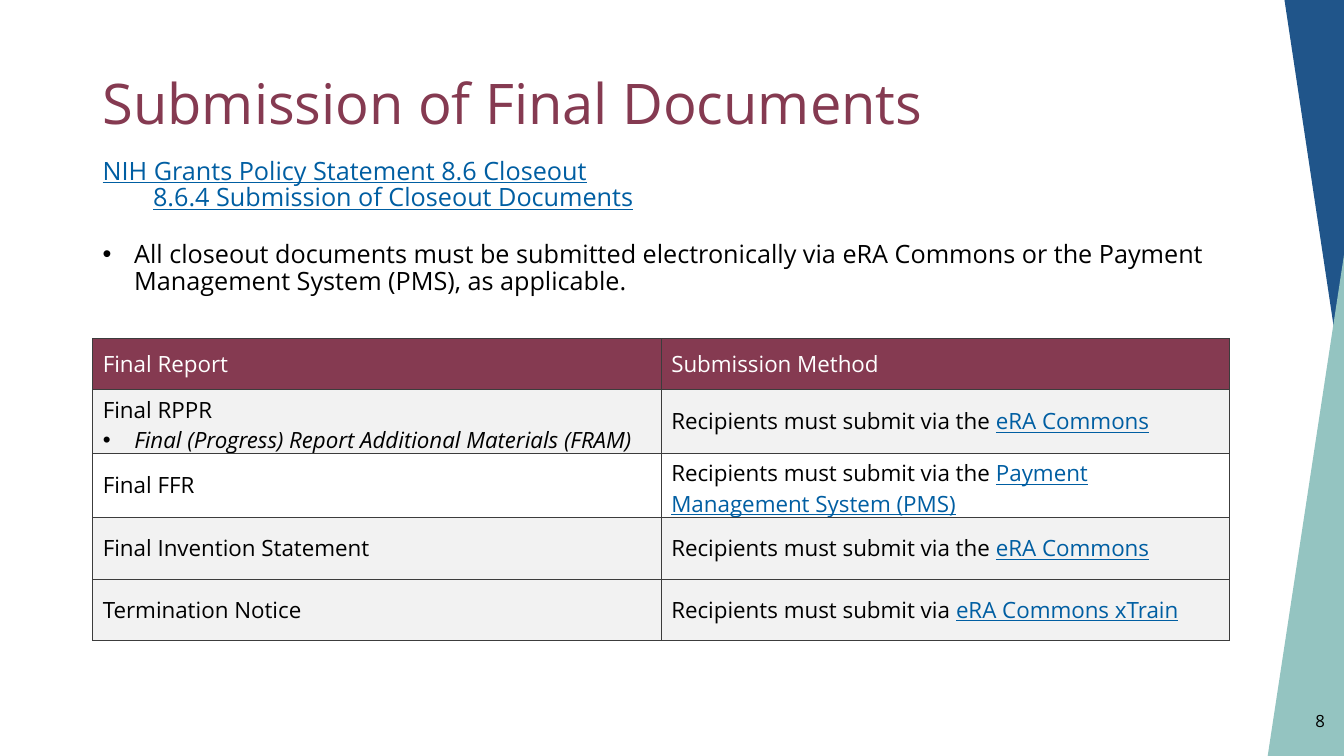
from pptx import Presentation
from pptx.dml.color import RGBColor as RGB
from pptx.enum.text import MSO_ANCHOR as Anchor, PP_ALIGN as Align
from pptx.oxml.ns import qn
from pptx.util import Pt
from lxml.etree import SubElement as Sub

WINE = RGB(0x85, 0x3A, 0x51)
BLUE = RGB(0x20, 0x55, 0x8A)
TEAL = RGB(0x94, 0xC4, 0xC1)
LINK = RGB(0x00, 0x5E, 0xA2)
BLACK = RGB(0, 0, 0)
WHITE = RGB(0xFF, 0xFF, 0xFF)
GRAY = RGB(0xF2, 0xF2, 0xF2)
EDGE = RGB(0x3C, 0x3C, 0x3C)
FONT = "Open Sans"
WIDE, HIGH = 960, 540
LEFT, SPAN = 66.24, 812.16
INDENT = 22.5

VIA = "Recipients must submit via "
ROWS = [  # height, report, sub-item, method, link, fill
    (44, "Final RPPR", "Final (Progress) Report Additional Materials (FRAM)",
     VIA + "the ", "eRA Commons", GRAY),
    (46, "Final FFR", None,
     VIA + "the ", "Payment Management System (PMS)", WHITE),
    (44, "Final Invention Statement", None,
     VIA + "the ", "eRA Commons", GRAY),
    (44, "Termination Notice", None,
     VIA, "eRA Commons xTrain", GRAY),
]


def style(run, size, color=BLACK, link=False, italic=False):
    font = run.font
    font.name, font.size = FONT, Pt(size)
    font.bold, font.italic, font.underline = False, italic, link
    font.color.rgb = LINK if link else color


def write(para, text, size, **look):
    para.text = text
    style(para.runs[0], size, **look)


def indent(para, left, bullet=False):
    props = para._p.get_or_add_pPr()
    props.set("marL", str(Pt(left)))
    props.set("indent", str(Pt(-left if bullet else 0)))
    if bullet:
        Sub(props, qn("a:buFont"), typeface="Arial")
        Sub(props, qn("a:buChar"), char="•")


def text_box(slide, box, anchor=Anchor.TOP):
    frame = slide.shapes.add_textbox(*map(Pt, box)).text_frame
    frame.word_wrap = True
    frame.vertical_anchor = anchor
    return frame


def wedge(slide, points, color):
    pen = slide.shapes.build_freeform(*map(Pt, points[0]))
    pen.add_line_segments([(Pt(x), Pt(y)) for x, y in points[1:]])
    shape = pen.convert_to_shape()
    shape.shadow.inherit = False
    shape.fill.solid()
    shape.fill.fore_color.rgb = color
    shape.line.fill.background()


def side_art(slide, box):
    left, top, wide, high = box
    right, base = left + wide, top + high
    wedge(slide, [(left + 12, top), (right, top), (right, top + 282)], BLUE)
    wedge(slide, [(left, base), (right, base), (right, base - 358)], TEAL)


def title(slide, box):
    frame = text_box(slide, box, Anchor.MIDDLE)
    write(frame.paragraphs[0], "Submission of Final Documents", 40, color=WINE)


def intro(slide, box):
    frame = text_box(slide, box)
    policy, part, rule = [frame.paragraphs[0], frame.add_paragraph(),
                          frame.add_paragraph()]
    for para in (policy, part, rule):
        para.line_spacing = 0.88
    rule.space_before = Pt(21.6)
    indent(part, 36)
    indent(rule, INDENT, bullet=True)
    write(policy, "NIH Grants Policy Statement 8.6 Closeout", 18, link=True)
    write(part, "8.6.4 Submission of Closeout Documents", 18, link=True)
    write(rule, "All closeout documents must be submitted electronically via "
          "eRA Commons or the Payment Management System (PMS), "
          "as applicable.", 18)


def dress(cell, color):
    """Give a table cell its borders, fill and anchor."""
    props = cell._tc.get_or_add_tcPr()
    for side in "LRTB":
        line = Sub(props, qn("a:ln" + side), w=str(Pt(0.5)))
        Sub(Sub(line, qn("a:solidFill")), qn("a:srgbClr"), val=str(EDGE))
    cell.fill.solid()
    cell.fill.fore_color.rgb = color
    cell.vertical_anchor = Anchor.MIDDLE


def methods(slide, box):
    table = slide.shapes.add_table(len(ROWS) + 1, 2, *map(Pt, box)).table
    for col in table.columns:
        col.width = Pt(box[2] / 2)
    table.rows[0].height = Pt(36)
    for cell, head in zip(table.rows[0].cells,
                          ("Final Report", "Submission Method")):
        dress(cell, WINE)
        write(cell.text_frame.paragraphs[0], head, 16, color=WHITE)
    for row, (high, report, extra, lead, link, fill) in zip(
            list(table.rows)[1:], ROWS):
        row.height = Pt(high)
        name, how = row.cells
        dress(name, fill)
        dress(how, fill)
        write(name.text_frame.paragraphs[0], report, 16)
        if extra:
            item = name.text_frame.add_paragraph()
            indent(item, INDENT, bullet=True)
            write(item, extra, 16, italic=True)
        para = how.text_frame.paragraphs[0]
        write(para, lead, 16)
        run = para.add_run()
        run.text = link
        style(run, 16, link=True)


def number(slide, box):
    para = text_box(slide, box, Anchor.MIDDLE).paragraphs[0]
    para.alignment = Align.RIGHT
    write(para, "8", 12)


def main():
    deck = Presentation()
    deck.slide_width, deck.slide_height = Pt(WIDE), Pt(HIGH)
    slide = deck.slides.add_slide(deck.slide_layouts[6])
    side_art(slide, (905.5, 0, WIDE - 905.5, HIGH))
    title(slide, (LEFT, 29, SPAN, 88))
    number(slide, (636.5, 500.5, 317, 28.75))
    methods(slide, (LEFT, 242, SPAN, 214))
    intro(slide, (LEFT, 110, SPAN, 116.5))
    deck.save("out.pptx")


if __name__ == "__main__":
    main()
